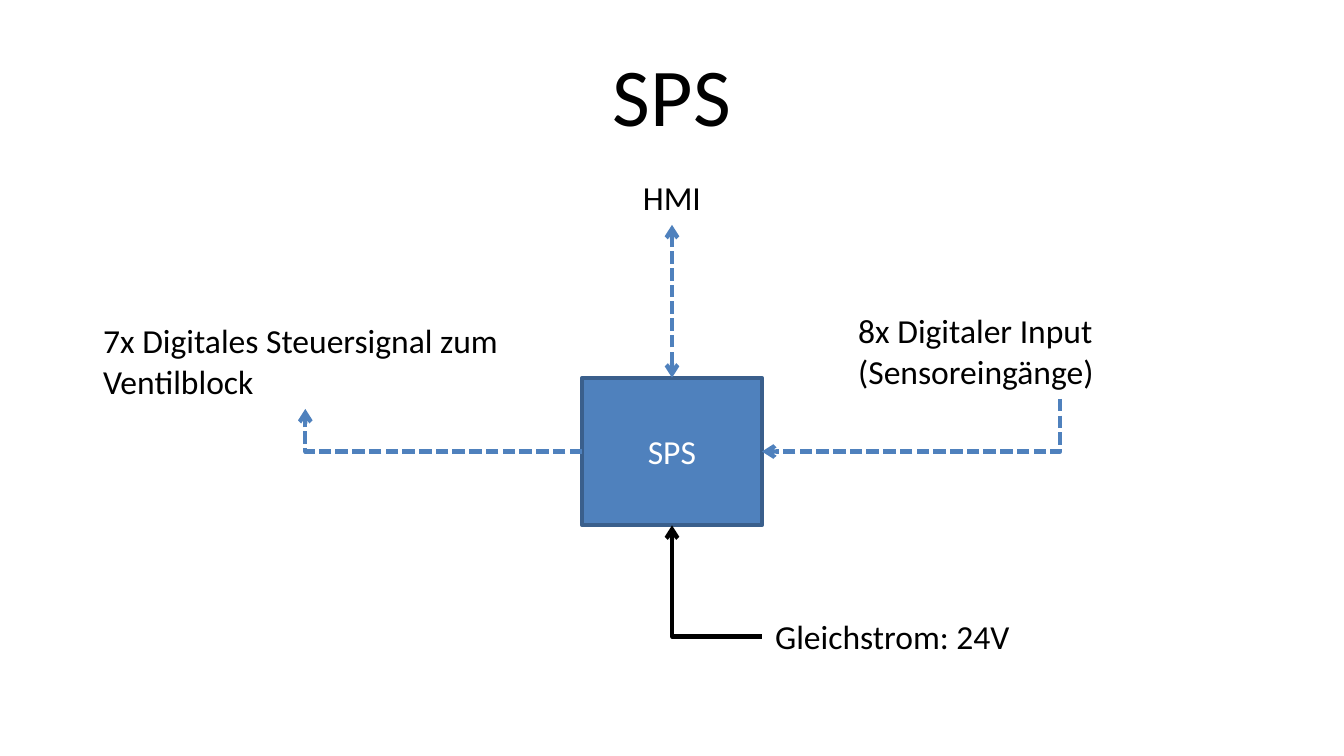
from dataclasses import dataclass
from typing import Optional

from lxml import etree
from pptx import Presentation, util as u
from pptx.dml.color import RGBColor
from pptx.enum import dml, shapes, text
from pptx.oxml.ns import qn

COLOURS = {"ink": "000000", "white": "FFFFFF", "blue": "4F81BD", "edge": "3A5F8C"}
FONT = "Calibri"


@dataclass
class Label:
    words: str
    left: float
    top: float
    width: float
    height: float
    size: int = 18
    align: text.PP_ALIGN = text.PP_ALIGN.LEFT
    anchor: text.MSO_ANCHOR = text.MSO_ANCHOR.TOP
    colour: str = "ink"


@dataclass
class Link:
    start: tuple[float, float]
    end: tuple[float, float]
    turn: Optional[int] = None  # rotation of the elbow, None for a straight line
    colour: str = "blue"
    dashed: bool = True
    both_ends: bool = False


def colour(name: str) -> RGBColor:
    return RGBColor.from_string(COLOURS[name])


def write(shape, label: Label) -> None:
    frame = shape.text_frame
    frame.word_wrap = True
    frame.vertical_anchor = label.anchor
    para = frame.paragraphs[0]
    para.alignment = label.align
    span = para.add_run()
    span.text = label.words
    for key, value in {"name": FONT, "size": u.Pt(label.size)}.items():
        setattr(span.font, key, value)
    span.font.color.rgb = colour(label.colour)


def bounds(label: Label) -> list[u.Length]:
    return [u.Cm(v) for v in (label.left, label.top, label.width, label.height)]


def draw_label(page, label: Label) -> None:
    write(page.shapes.add_textbox(*bounds(label)), label)


def draw_block(page, label: Label) -> None:
    block = page.shapes.add_shape(shapes.MSO_SHAPE.RECTANGLE, *bounds(label))
    block.shadow.inherit = False
    block.fill.solid()
    block.fill.fore_color.rgb = colour("blue")
    block.line.color.rgb = colour("edge")
    block.line.width = u.Pt(2)
    write(block, label)


def draw_link(page, link: Link) -> None:
    (x1, y1), (x2, y2) = link.start, link.end
    kind = shapes.MSO_CONNECTOR.STRAIGHT
    if link.turn is not None:
        # The unrotated frame shares its centre with the drawn elbow
        kind = shapes.MSO_CONNECTOR.ELBOW
        half_w, half_h = abs(x2 - x1) / 2, abs(y2 - y1) / 2
        if link.turn == 90:
            half_w, half_h = half_h, half_w
        mid_x, mid_y = (x1 + x2) / 2, (y1 + y2) / 2
        x1, y1, x2, y2 = mid_x - half_w, mid_y - half_h, mid_x + half_w, mid_y + half_h
    line = page.shapes.add_connector(kind, *[u.Cm(v) for v in (x1, y1, x2, y2)])
    line.line.color.rgb = colour(link.colour)
    line.line.width = u.Pt(2.25)
    if link.dashed:
        line.line.dash_style = dml.MSO_LINE.SQUARE_DOT
    props = line._element.spPr
    if link.turn is not None:
        props.find(qn("a:xfrm")).set("rot", str(link.turn * 60000))
        props.find(qn("a:prstGeom")).set("prst", "bentConnector2")
    for tag in ["headEnd"] * link.both_ends + ["tailEnd"]:
        etree.SubElement(props.find(qn("a:ln")), qn(f"a:{tag}"), type="arrow")
    etree.SubElement(props, qn("a:effectLst"))


CENTRE, MIDDLE = text.PP_ALIGN.CENTER, text.MSO_ANCHOR.MIDDLE

# Controller block and the points where links meet it
BLOCK = Label("SPS", 11, 7.14, 3.4, 2.79, align=CENTRE, anchor=MIDDLE, colour="white")
RIGHT, BOTTOM = BLOCK.left + BLOCK.width, BLOCK.top + BLOCK.height
MID_X, MID_Y = BLOCK.left + BLOCK.width / 2, BLOCK.top + BLOCK.height / 2

LABELS = [
    Label("SPS", 1.27, 0.58, 22.86, 2.39, 44, CENTRE, MIDDLE),
    Label("HMI", 10.21, 3.22, 4.98, 1.03, align=CENTRE),
    Label("7x Digitales Steuersignal zum Ventilblock", 1.7, 5.93, 8.15, 1.8),
    Label("8x Digitaler Input (Sensoreingänge)", 15.97, 5.74, 8.15, 1.8),
    Label("Gleichstrom: 24V", RIGHT, 11.52, 8.4, 1.03),
]

LINKS = [
    Link((20.04, 7.54), (RIGHT, MID_Y), 90),
    Link((BLOCK.left, MID_Y), (5.77, 7.73), 180),
    Link((RIGHT, 12.03), (MID_X, BOTTOM), 180, "ink", dashed=False),
    Link((MID_X, BLOCK.top), (MID_X, 4.25), both_ends=True),
]


def main() -> None:
    deck = Presentation()
    deck.slide_width, deck.slide_height = u.Cm(25.4), u.Cm(14.29)
    page = deck.slides.add_slide(deck.slide_layouts[6])
    draw_block(page, BLOCK)
    for label in LABELS:
        draw_label(page, label)
    for link in LINKS:
        draw_link(page, link)
    deck.save("out.pptx")


if __name__ == "__main__":
    main()
